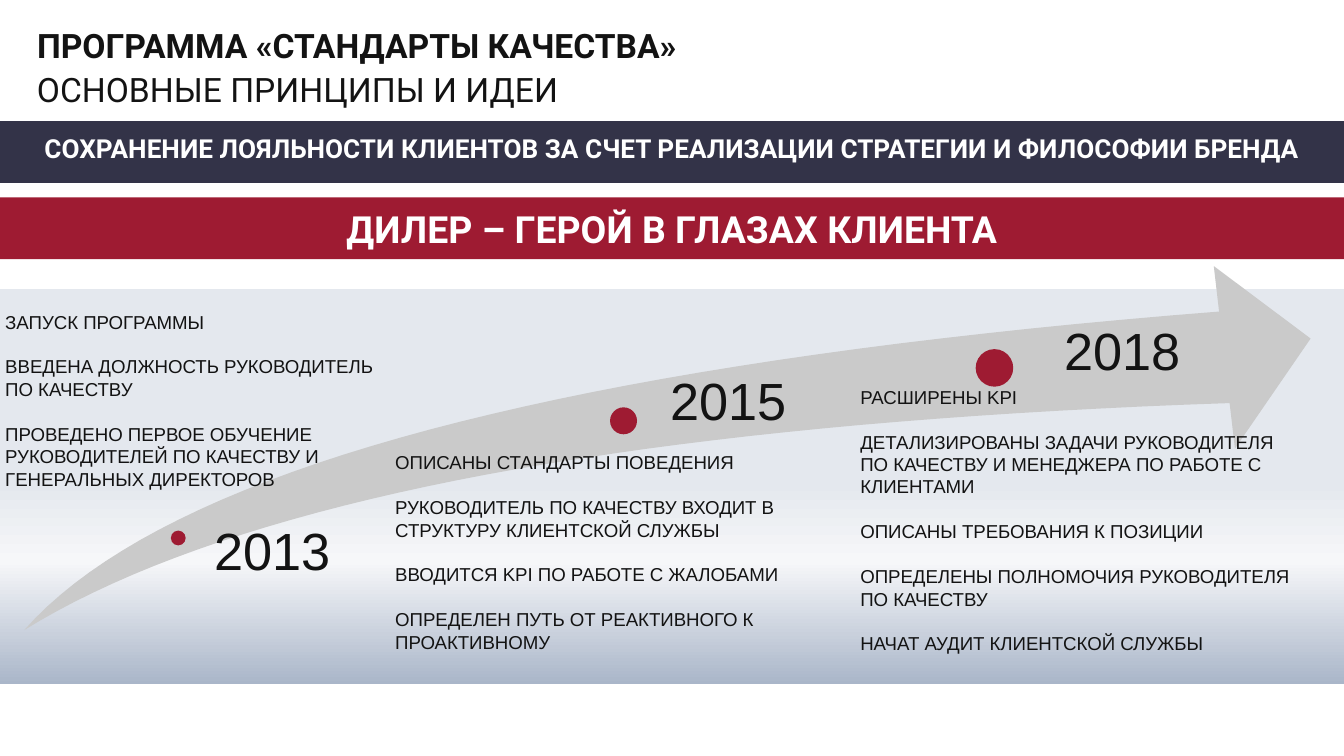
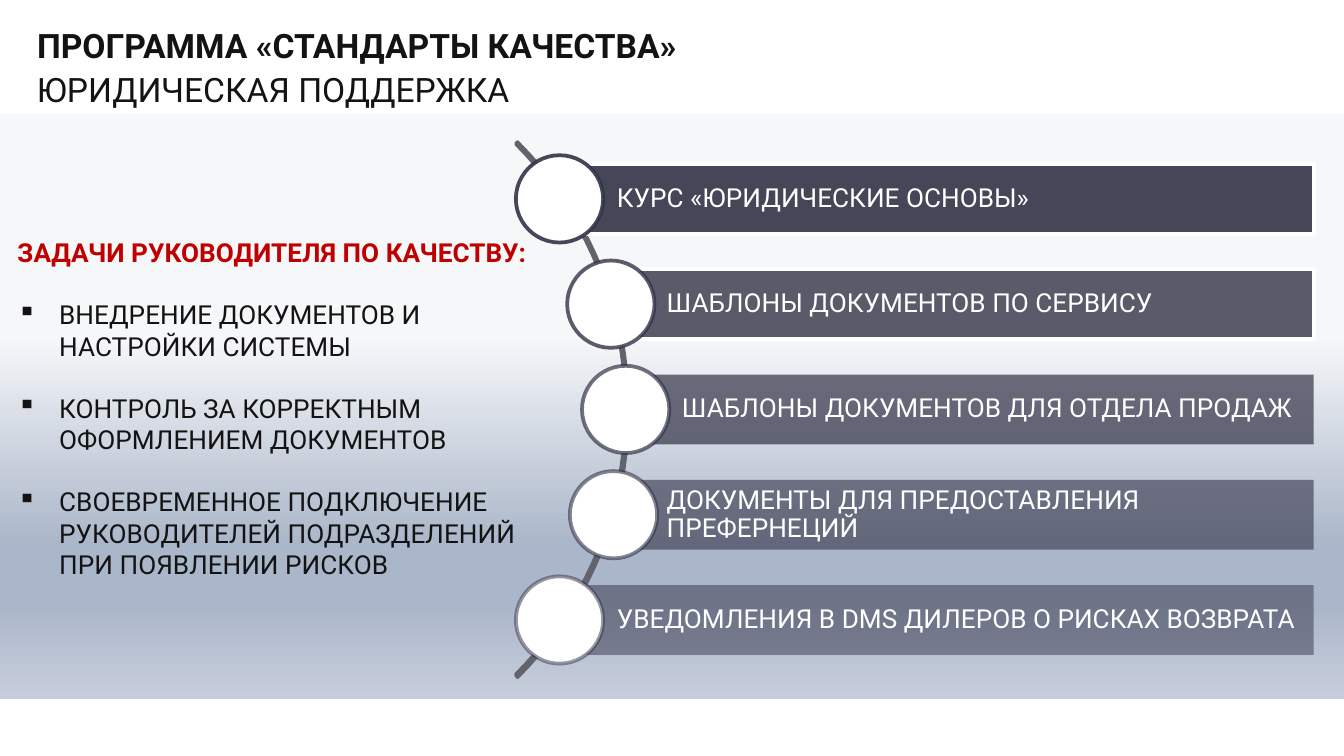
import pptx
import pptx.dml.color
import pptx.enum.shapes
import pptx.enum.text
import pptx.oxml.ns
import pptx.util
from lxml import etree

Cm = pptx.util.Cm
Pt = pptx.util.Pt
qn = pptx.oxml.ns.qn
SHAPE = pptx.enum.shapes.MSO_SHAPE
ALIGN = pptx.enum.text.PP_ALIGN
ANCHOR = pptx.enum.text.MSO_ANCHOR

# Shared look
INK, WHITE, NAVY, CRIMSON = "131313", "FFFFFF", "333348", "9E1B32"
WIDTH, HEIGHT = 25.4, 14.29
PROGRAMME = "ПРОГРАММА «СТАНДАРТЫ КАЧЕСТВА»"
HEADING = {"name": "Roboto", "size": Pt(18), "bold": True}
SUBHEADING = {"name": "Roboto", "size": Pt(18)}
BODY = {"name": "Roboto", "size": Pt(14)}
BODY_BOLD = {**BODY, "bold": True}
SLOGAN = {"name": "Roboto", "size": Pt(20), "bold": True}
YEAR = {"name": "Arial", "size": Pt(28)}
NOTE = {"name": "Arial", "size": Pt(10)}

# Slide 1: year, its label place, dot (left, top, diameter), notes place, notes
MILESTONES = [
    ("2013", (4.06, 9.93), (3.23, 10.03, 0.28), (0.1, 5.87, 7.47, 3.1), [
        "ЗАПУСК ПРОГРАММЫ",
        "ВВЕДЕНА ДОЛЖНОСТЬ РУКОВОДИТЕЛЬ ПО КАЧЕСТВУ",
        "ПРОВЕДЕНО ПЕРВОЕ ОБУЧЕНИЕ РУКОВОДИТЕЛЕЙ ПО КАЧЕСТВУ И "
        "ГЕНЕРАЛЬНЫХ ДИРЕКТОРОВ"]),
    ("2015", (12.67, 7.09), (11.53, 7.7, 0.51), (7.47, 8.53, 8.43, 3.51), [
        "ОПИСАНЫ СТАНДАРТЫ ПОВЕДЕНИЯ",
        "РУКОВОДИТЕЛЬ ПО КАЧЕСТВУ ВХОДИТ В СТРУКТУРУ КЛИЕНТСКОЙ СЛУЖБЫ",
        "ВВОДИТСЯ KPI ПО РАБОТЕ С ЖАЛОБАМИ",
        "ОПРЕДЕЛЕН ПУТЬ ОТ РЕАКТИВНОГО К ПРОАКТИВНОМУ"]),
    ("2018", (20.12, 6.15), (18.44, 6.6, 0.71), (16.26, 7.29, 8.31, 5.03), [
        "РАСШИРЕНЫ KPI",
        "ДЕТАЛИЗИРОВАНЫ ЗАДАЧИ РУКОВОДИТЕЛЯ ПО КАЧЕСТВУ И МЕНЕДЖЕРА "
        "ПО РАБОТЕ С КЛИЕНТАМИ",
        "ОПИСАНЫ ТРЕБОВАНИЯ К ПОЗИЦИИ",
        "ОПРЕДЕЛЕНЫ ПОЛНОМОЧИЯ РУКОВОДИТЕЛЯ ПО КАЧЕСТВУ",
        "НАЧАТ АУДИТ КЛИЕНТСКОЙ СЛУЖБЫ"]),
]

# Slide 2: bar left, circle left, text height, white edge, text
DOCUMENTS = [
    (10.6, 9.75, 0.74, True, "КУРС «ЮРИДИЧЕСКИЕ ОСНОВЫ»"),
    (11.54, 10.72, 0.74, True, "ШАБЛОНЫ ДОКУМЕНТОВ ПО СЕРВИСУ"),
    (11.83, 11.0, 0.74, False, "ШАБЛОНЫ ДОКУМЕНТОВ ДЛЯ ОТДЕЛА ПРОДАЖ"),
    (11.54, 10.77, 1.3, False, "ДОКУМЕНТЫ ДЛЯ ПРЕДОСТАВЛЕНИЯ ПРЕФЕРНЕЦИЙ"),
    (10.6, 9.75, 0.74, False, "УВЕДОМЛЕНИЯ В DMS ДИЛЕРОВ О РИСКАХ ВОЗВРАТА"),
]
TASKS = [
    "ВНЕДРЕНИЕ ДОКУМЕНТОВ И НАСТРОЙКИ СИСТЕМЫ",
    "КОНТРОЛЬ ЗА КОРРЕКТНЫМ ОФОРМЛЕНИЕМ ДОКУМЕНТОВ",
    "СВОЕВРЕМЕННОЕ ПОДКЛЮЧЕНИЕ РУКОВОДИТЕЛЕЙ ПОДРАЗДЕЛЕНИЙ "
    "ПРИ ПОЯВЛЕНИИ РИСКОВ",
]


def rgb(code):
    return pptx.dml.color.RGBColor.from_string(code)


def paint(fill, color, opacity=100):
    fill.solid()
    fill.fore_color.rgb = rgb(color)
    if opacity < 100:
        tint = fill._xPr.find(qn("a:solidFill"))[0]
        etree.SubElement(tint, qn("a:alpha"), val=str(opacity * 1000))


def add_figure(slide, kind, place, color=None, opacity=100):
    figure = slide.shapes.add_shape(kind, *map(Cm, place))
    figure.shadow.inherit = False
    figure.line.fill.background()
    if color:
        paint(figure.fill, color, opacity)
    return figure


def outline(figure, color, width, opacity=100):
    figure.line.width = Pt(width)
    paint(figure.line.fill, color, opacity)


def add_backdrop(slide, top, height, stops):
    """Full-width panel shaded from top to bottom."""
    panel = add_figure(slide, SHAPE.RECTANGLE, (0, top, WIDTH, height))
    panel.fill.gradient()
    panel.fill.gradient_angle = 270
    stop_list = panel._element.spPr.find(".//" + qn("a:gsLst"))
    for stop in list(stop_list):
        stop_list.remove(stop)
    for position, color in stops:
        stop = etree.SubElement(stop_list, qn("a:gs"), pos=str(position * 1000))
        etree.SubElement(stop, qn("a:srgbClr"), val=color)


def set_frame(frame, anchor, inset=0):
    settings = {"word_wrap": True, "vertical_anchor": anchor,
                "auto_size": pptx.enum.text.MSO_AUTO_SIZE.NONE}
    settings.update({f"margin_{side}": Cm(inset)
                     for side in ("left", "top", "right", "bottom")})
    for key, value in settings.items():
        setattr(frame, key, value)


def write(paragraph, text, style, color=INK, **layout):
    for key, value in layout.items():
        setattr(paragraph, key, value)
    run = paragraph.add_run()
    run.text = text
    for key, value in style.items():
        setattr(run.font, key, value)
    run.font.color.rgb = rgb(color)


def add_text(slide, place, lines, style, color=INK, anchor=ANCHOR.TOP,
             inset=0, gap=0, **layout):
    frame = slide.shapes.add_textbox(*map(Cm, place)).text_frame
    set_frame(frame, anchor, inset)
    for number, line in enumerate(lines):
        if number:
            paragraph = frame.add_paragraph()
            paragraph.space_before = Pt(gap)
        else:
            paragraph = frame.paragraphs[0]
        write(paragraph, line, style, color, **layout)
    return frame


def add_bullet(frame, text, style, gap):
    paragraph = frame.add_paragraph()
    properties = paragraph._p.get_or_add_pPr()
    properties.set("marL", str(Cm(0.79)))
    properties.set("indent", str(-Cm(0.79)))
    etree.SubElement(properties, qn("a:buChar"), char="▪")
    write(paragraph, text, style, space_before=Pt(gap))


def add_band(slide, top, text, text_top, text_height, style, color):
    add_figure(slide, SHAPE.RECTANGLE, (0, top, WIDTH, 1.17), color)
    add_text(slide, (0, text_top, WIDTH, text_height), [text], style, WHITE,
             ANCHOR.MIDDLE, alignment=ALIGN.CENTER)


def add_rule(slide, top):
    rule = slide.shapes.add_connector(
        pptx.enum.shapes.MSO_CONNECTOR.STRAIGHT,
        Cm(0.61), Cm(top), Cm(24.79), Cm(top))
    outline(rule, "898989", 0.5)
    etree.SubElement(rule._element.spPr, qn("a:effectLst"))


def curve(start, pull_out, pull_in, end, steps=40):
    """Points along a cubic curve, without its start."""
    points = []
    for step in range(1, steps + 1):
        t = step / steps
        weights = ((1 - t) ** 3, 3 * t * (1 - t) ** 2, 3 * t * t * (1 - t), t ** 3)
        points.append(tuple(
            sum(w * value for w, value in zip(weights, axis))
            for axis in zip(start, pull_out, pull_in, end)))
    return points


def add_outline(slide, points):
    corners = [(Cm(x), Cm(y)) for x, y in points]
    builder = slide.shapes.build_freeform(*corners[0])
    builder.add_line_segments(corners[1:], close=True)
    figure = builder.convert_to_shape()
    figure.shadow.inherit = False
    figure.line.fill.background()
    return figure


def add_slide(deck, subtitle):
    """Title-only slide with the two-line heading."""
    slide = deck.slides.add_slide(deck.slide_layouts[5])
    title = slide.shapes.title
    place = {"left": 0.7, "top": 0.46, "width": 18.42, "height": 0.8}
    for key, value in place.items():
        setattr(title, key, Cm(value))
    set_frame(title.text_frame, ANCHOR.MIDDLE)
    write(title.text_frame.paragraphs[0], PROGRAMME, HEADING,
          alignment=ALIGN.LEFT)
    add_text(slide, (0.7, 1.3, 18.42, 0.79), [subtitle], SUBHEADING)
    return slide


def build_principles(deck):
    slide = add_slide(deck, "ОСНОВНЫЕ ПРИНЦИПЫ И ИДЕИ")
    add_rule(slide, 2.29)
    add_backdrop(slide, 5.46, 7.47,
                 [(49, "E4E8EE"), (69, "F6F7F9"), (100, "AAB6C9")])
    add_band(slide, 2.29, "СОХРАНЕНИЕ ЛОЯЛЬНОСТИ КЛИЕНТОВ ЗА СЧЕТ РЕАЛИЗАЦИИ "
             "СТРАТЕГИИ И ФИЛОСОФИИ БРЕНДА", 2.28, 1.02, BODY_BOLD, NAVY)
    add_band(slide, 3.73, "ДИЛЕР – ГЕРОЙ В ГЛАЗАХ КЛИЕНТА",
             3.91, 0.84, SLOGAN, CRIMSON)

    # Rising arrow
    tail, upper, lower = (0.46, 11.91), (23.04, 5.89), (23.24, 7.62)
    head = [(22.94, 5.03), (24.77, 6.4), (23.34, 8.48), lower]
    arrow = add_outline(slide, [
        tail, *curve(tail, (3.15, 8.86), (10.69, 6.86), upper),
        *head, *curve(lower, (12.09, 8.0), (4.5, 9.42), tail)])
    paint(arrow.fill, "CACACA")

    # Milestones along the arrow
    for year, label, (left, top, size), place, notes in MILESTONES:
        add_figure(slide, SHAPE.OVAL, (left, top, size, size), CRIMSON)
        add_text(slide, (*label, 2.4, 1.09), [year], YEAR, line_spacing=0.9)
        add_text(slide, place, notes, NOTE, gap=12)


def build_legal_support(deck):
    slide = add_slide(deck, "ЮРИДИЧЕСКАЯ ПОДДЕРЖКА")
    add_backdrop(slide, 2.16, 11.05, [(38, "F6F7F9"), (74, "AAB6C9"),
                                      (83, "AAB6C9"), (100, "C6CEDB")])

    # Arc that links the circles
    start, end, back = (9.78, 2.69), (9.78, 12.8), (9.75, 12.75)
    arc = add_outline(slide, [
        start, *curve(start, (12.57, 5.49), (12.57, 10.01), end),
        back, *curve(back, (12.52, 9.98), (12.52, 5.49), (9.75, 2.72))])
    arc.fill.background()
    outline(arc, "63636E", 2)

    # Document bars, fading downwards
    right, pitch, bar_height, circle = 24.83, 1.99, 1.32, 1.65
    for row, (left, circle_left, text_height, edged, text) in enumerate(DOCUMENTS):
        top = 3.1 + row * pitch
        opacity = 90 - 10 * row
        bar = add_figure(slide, SHAPE.RECTANGLE,
                         (left, top, right - left, bar_height), NAVY, opacity)
        if edged:
            outline(bar, WHITE, 2)
        text_left = left + 0.96
        text_top = top + (bar_height - text_height) / 2
        add_text(slide, (text_left, text_top, right - text_left, text_height),
                 [text], BODY, WHITE, ANCHOR.MIDDLE, 0.1, line_spacing=0.9)
        circle_top = top + (bar_height - circle) / 2
        ring = add_figure(slide, SHAPE.OVAL,
                          (circle_left, circle_top, circle, circle), WHITE)
        outline(ring, NAVY, 2, opacity)

    # Tasks
    tasks = add_text(slide, (0.33, 4.47, 9.7, 6.58),
                     ["ЗАДАЧИ РУКОВОДИТЕЛЯ ПО КАЧЕСТВУ:"], BODY_BOLD, "C00000")
    for task in TASKS:
        add_bullet(tasks, task, BODY, 16.5)


def main():
    deck = pptx.Presentation()
    deck.slide_width, deck.slide_height = Cm(WIDTH), Cm(HEIGHT)
    build_principles(deck)
    build_legal_support(deck)
    deck.save("out.pptx")


if __name__ == "__main__":
    main()
